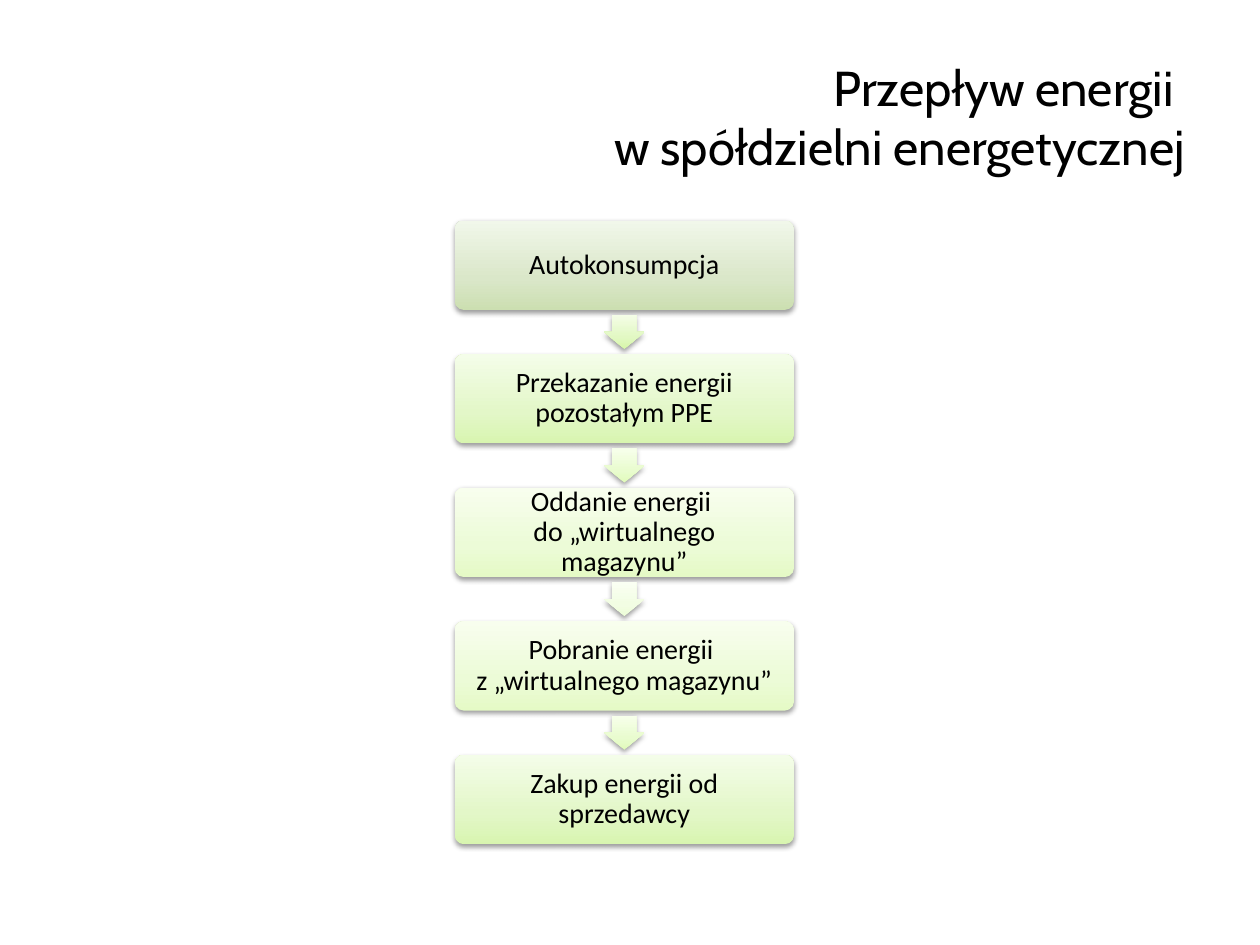
from lxml import etree
from pptx import Presentation
from pptx.dml.color import RGBColor
from pptx.enum.shapes import MSO_SHAPE as SHAPE
from pptx.enum.text import MSO_ANCHOR as ANCHOR, PP_ALIGN as ALIGN
from pptx.oxml import parse_xml
from pptx.oxml.ns import nsdecls
from pptx.util import Inches, Pt

# Gradients run from the bottom edge to the top
COLORS = {
    "text": "000000",
    "sage": ("CCDFB1", "DAE7C9", "F1F7EA"),
    "lime": ("D8F5B0", "E3F7C8", "F4FDE9"),
    "pale": ("E5FAC6", "ECFBD7", "F8FEEE"),
    "arrow_strong": ("D7F7A9", "E2F8C3", "F4FDE7"),
    "arrow_mid": ("E1FBBB", "E9FCCF", "F7FFEB"),
    "arrow_pale": ("EDFDD8", "F2FDE3", "FAFFF3"),
}


def style_shape(sp, colors):
    """Give a shape a vertical gradient, no line and a soft shadow."""
    sp.line.fill.background()
    sp.shadow.inherit = False
    sp.fill.gradient()
    grad = sp.fill._xPr.gradFill
    stops = "".join(
        f'<a:gs pos="{pos}"><a:srgbClr val="{color}"/></a:gs>'
        for pos, color in zip((0, 35000, 100000), colors)
    )
    grad.getparent().replace(grad, parse_xml(
        f'<a:gradFill {nsdecls("a")} rotWithShape="0"><a:gsLst>{stops}</a:gsLst>'
        '<a:lin ang="16200000" scaled="0"/></a:gradFill>'))
    effects = sp._element.spPr.find("{*}effectLst")
    effects.append(parse_xml(
        f'<a:outerShdw {nsdecls("a")} blurRad="{Pt(3.1)}" dist="{Pt(1.6)}" '
        'dir="5400000" rotWithShape="0"><a:srgbClr val="000000">'
        '<a:alpha val="38000"/></a:srgbClr></a:outerShdw>'))


def add_text(tf, lines, align, font, size):
    """Write the lines as one paragraph with line breaks."""
    tf.word_wrap = True
    tf.vertical_anchor = ANCHOR.MIDDLE
    p = tf.paragraphs[0]
    p.alignment = align
    for i, line in enumerate(lines):
        if i:
            p.add_line_break()
        r = p.add_run()
        r.text = line
        r.font.name = font
        r.font.size = Pt(size)
        r.font.color.rgb = RGBColor.from_string(COLORS["text"])
    return p


prs = Presentation()
prs.slide_width, prs.slide_height = Inches(10), Inches(7.5)
s = prs.slides.add_slide(prs.slide_layouts[6])

# Title
title = s.shapes.add_textbox(Inches(0.5), Inches(0.3), Inches(9), Inches(1.25))
add_text(title.text_frame, ["Przepływ energii ", "w spółdzielni energetycznej"],
         ALIGN.RIGHT, "Cabin", 28)

# Flow steps, each with the colour of its box and of the arrow below it
STEPS = [
    (["Autokonsumpcja"], "sage", "arrow_strong"),
    (["Przekazanie energii pozostałym PPE"], "lime", "arrow_mid"),
    (["Oddanie energii ", "do „wirtualnego magazynu”"], "pale", "arrow_pale"),
    (["Pobranie energii ", "z „wirtualnego magazynu”"], "pale", "arrow_mid"),
    (["Zakup energii od sprzedawcy"], "lime", None),
]
LEFT, TOP, PITCH = 3.61, 1.75, 1.06
BOX_W, BOX_H = 2.69, 0.71
ARROW_W, ARROW_H = 0.27, 0.32

for i, (lines, box_color, arrow_color) in enumerate(STEPS):
    y = TOP + i * PITCH

    # Step box
    box = s.shapes.add_shape(SHAPE.ROUNDED_RECTANGLE, Inches(LEFT), Inches(y),
                             Inches(BOX_W), Inches(BOX_H))
    box.adjustments[0] = 0.1
    style_shape(box, COLORS[box_color])
    tf = box.text_frame
    tf.margin_left = tf.margin_right = Inches(0.09)
    tf.margin_top = tf.margin_bottom = Inches(0.09)
    p = add_text(tf, lines, ALIGN.CENTER, "Calibri", 16)
    p.line_spacing = 0.9

    # Arrow centred in the gap to the next step
    if arrow_color:
        arrow = s.shapes.add_shape(
            SHAPE.RIGHT_ARROW, Inches(LEFT + (BOX_W - ARROW_W) / 2),
            Inches(y + (BOX_H + PITCH - ARROW_H) / 2),
            Inches(ARROW_W), Inches(ARROW_H))
        arrow.rotation = 90
        arrow.adjustments[0] = 0.6
        arrow.adjustments[1] = 0.5
        style_shape(arrow, COLORS[arrow_color])

prs.save("out.pptx")
